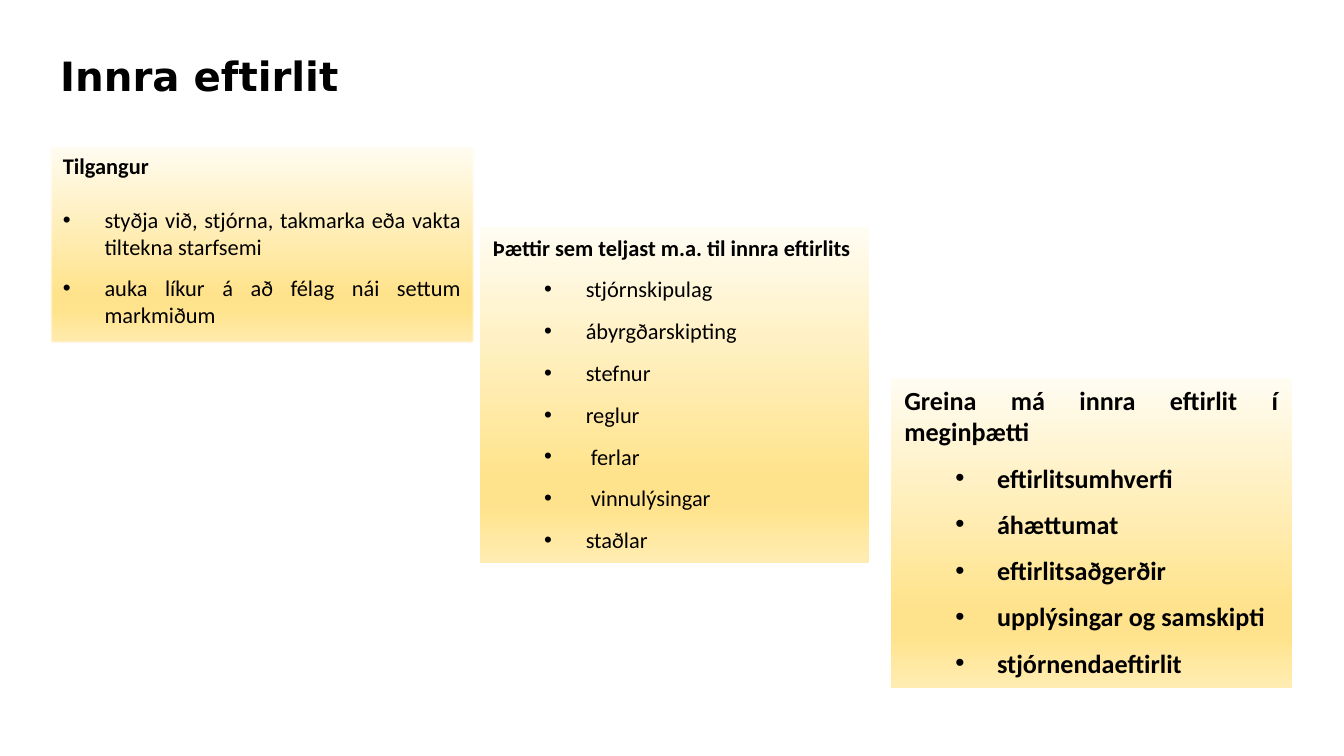
from dataclasses import dataclass

from lxml import etree
from pptx import Presentation
from pptx.dml.color import RGBColor
from pptx.enum import shapes, text
from pptx.oxml import ns
from pptx.util import Inches, Pt

GOLD_STOPS = [(0, "FFFCF2"), (74, "FFE38C"), (83, "FFE38C"), (100, "FFECB2")]
HANGING = 0.31


@dataclass
class Panel:
    left: float
    top: float
    width: float
    height: float
    heading: str
    items: list[str]
    size: float = 12
    indent: float = 0.69
    level: int = 1
    bold_items: bool = False
    heading_gap: float = 8
    heading_align: text.PP_ALIGN = text.PP_ALIGN.JUSTIFY
    soft_edge: float = 0


PANELS = [
    Panel(0.37, 1.08, 3.16, 1.48, "Tilgangur",
          ["styðja við, stjórna, takmarka eða vakta tiltekna starfsemi",
           "auka líkur á að félag nái settum markmiðum"],
          indent=HANGING, level=0, heading_gap=14.6,
          heading_align=text.PP_ALIGN.LEFT, soft_edge=1),
    Panel(3.57, 1.69, 2.9, 2.5, "Þættir sem teljast m.a. til innra eftirlits",
          ["stjórnskipulag", "ábyrgðarskipting", "stefnur", "reglur",
           " ferlar", " vinnulýsingar", "staðlar"]),
    Panel(6.63, 2.81, 2.98, 2.31, "Greina má innra eftirlit í meginþætti",
          ["eftirlitsumhverfi", "áhættumat", "eftirlitsaðgerðir",
           "upplýsingar og samskipti", "stjórnendaeftirlit"],
          size=14, bold_items=True),
]


def color(hex_value: str) -> RGBColor:
    return RGBColor.from_string(hex_value)


def set_font(paragraph, name: str, size: float, bold: bool) -> None:
    font = paragraph.font
    font.name, font.size, font.bold = name, Pt(size), bold
    font.color.rgb = color("000000")


def fill_gold(shape) -> None:
    """Fill from top to bottom with the four gold stops."""
    shape.fill.gradient()
    shape.fill.gradient_angle = 270
    stops = shape._element.spPr.find(".//" + ns.qn("a:gsLst"))
    for stop in list(stops):
        stops.remove(stop)
    for position, hex_value in GOLD_STOPS:
        stop = etree.SubElement(stops, ns.qn("a:gs"), pos=str(position * 1000))
        etree.SubElement(stop, ns.qn("a:srgbClr"), val=hex_value)


def soften_edge(shape, radius: float) -> None:
    effects = shape._element.spPr.find(ns.qn("a:effectLst"))
    etree.SubElement(effects, ns.qn("a:softEdge"), rad=str(Pt(radius)))


def add_bullet(paragraph, indent: float) -> None:
    properties = paragraph._p.get_or_add_pPr()
    properties.set("marL", str(Inches(indent)))
    properties.set("indent", str(-Inches(HANGING)))
    etree.SubElement(properties, ns.qn("a:buFont"), typeface="Arial")
    etree.SubElement(properties, ns.qn("a:buChar"), char="•")


def draw_title(slide, title: str) -> None:
    box = slide.shapes.add_textbox(Inches(0.35), Inches(0.42), Inches(8.96), Inches(0.74))
    frame = box.text_frame
    frame.word_wrap = True
    frame.margin_top = 0
    paragraph = frame.paragraphs[0]
    paragraph.text = title
    paragraph.line_spacing = 0.9
    set_font(paragraph, "DejaVu Sans", 21.6, True)


def draw_panel(slide, panel: Panel) -> None:
    box = slide.shapes.add_shape(
        shapes.MSO_SHAPE.RECTANGLE, Inches(panel.left), Inches(panel.top),
        Inches(panel.width), Inches(panel.height))
    box.shadow.inherit = False
    box.line.fill.background()
    fill_gold(box)
    if panel.soft_edge:
        soften_edge(box, panel.soft_edge)
    frame = box.text_frame
    frame.word_wrap = True
    frame.auto_size = text.MSO_AUTO_SIZE.SHAPE_TO_FIT_TEXT
    frame.vertical_anchor = text.MSO_ANCHOR.TOP

    # Heading
    heading = frame.paragraphs[0]
    heading.text = panel.heading
    heading.alignment = panel.heading_align
    heading.space_after = Pt(panel.heading_gap)
    set_font(heading, "Calibri", panel.size, True)

    # Bulleted items
    for item in panel.items:
        paragraph = frame.add_paragraph()
        paragraph.text = item
        paragraph.level = panel.level
        paragraph.alignment = text.PP_ALIGN.JUSTIFY
        paragraph.space_after = Pt(8)
        add_bullet(paragraph, panel.indent)
        set_font(paragraph, "Calibri", panel.size, panel.bold_items)


def main() -> None:
    presentation = Presentation()
    # Widescreen, 16 to 9
    presentation.slide_width = Inches(10)
    presentation.slide_height = presentation.slide_width * 9 // 16
    slide = presentation.slides.add_slide(presentation.slide_layouts[6])
    draw_title(slide, "Innra eftirlit")
    for panel in PANELS:
        draw_panel(slide, panel)
    presentation.save("out.pptx")


if __name__ == "__main__":
    main()
